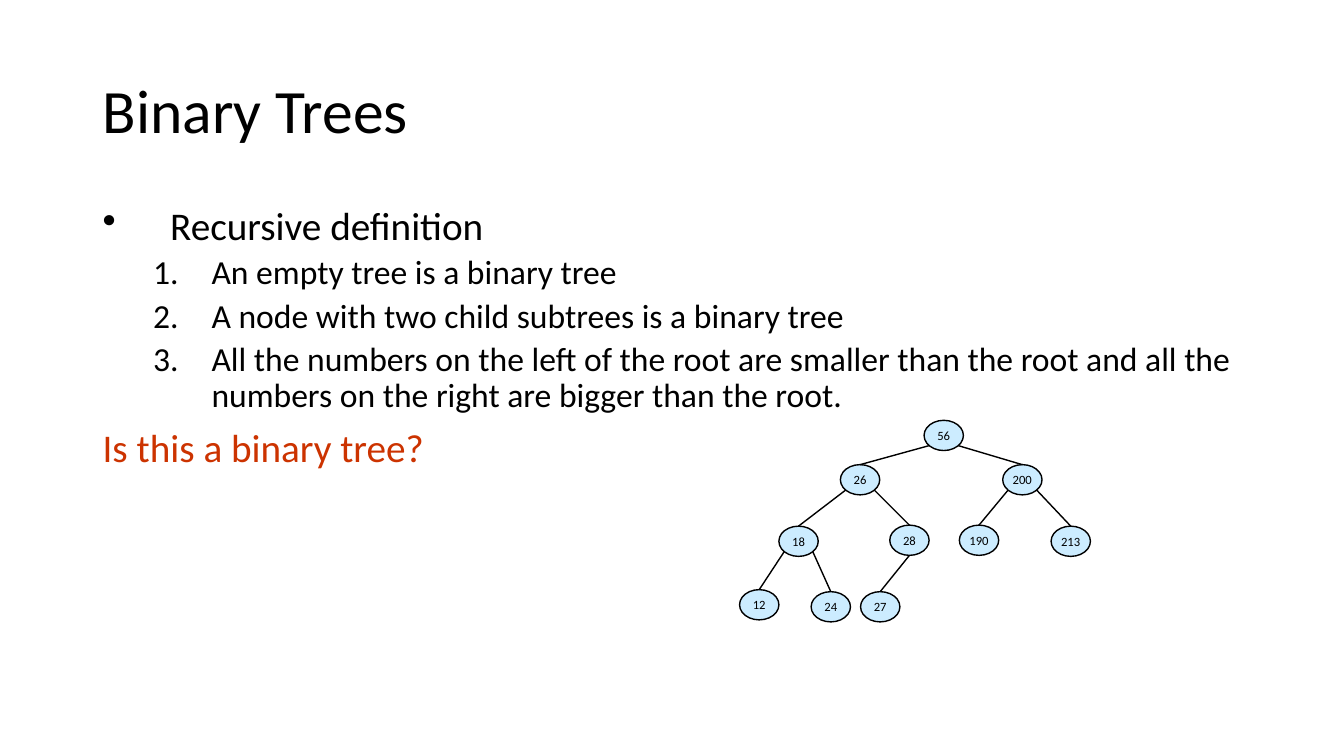
import pptx
import pptx.util
import pptx.dml.color
import pptx.enum.shapes
import pptx.enum.text
import pptx.oxml.ns
import lxml.etree

Inches = pptx.util.Inches
Pt = pptx.util.Pt
FONT = "Calibri"
COLORS = {"ink": "000000", "question": "CC3300", "node": "CCECFF"}


def color(name):
    return pptx.dml.color.RGBColor.from_string(COLORS[name])


def write(para, text, size, ink="ink", **layout):
    for name, value in layout.items():
        setattr(para, name, value)
    span = para.add_run()
    span.text = text
    for name, value in {"name": FONT, "size": Pt(size)}.items():
        setattr(span.font, name, value)
    span.font.color.rgb = color(ink)


deck = pptx.Presentation()
deck.slide_width = Inches(13.33)
deck.slide_height = Inches(7.5)
page = deck.slides.add_slide(deck.slide_layouts[6])

title = page.shapes.add_textbox(Inches(0.92), Inches(0.4), Inches(11.5), Inches(1.45))
title.text_frame.word_wrap = True
title.text_frame.vertical_anchor = pptx.enum.text.MSO_ANCHOR.MIDDLE
write(title.text_frame.paragraphs[0], "Binary Trees", 44, line_spacing=0.9)

body = page.shapes.add_textbox(Inches(0.92), Inches(2), Inches(11.5), Inches(4.76))
body.text_frame.word_wrap = True

bullet = ("buChar", {"char": "•"})
number = ("buAutoNum", {"type": "arabicPeriod"})
plain = ("buNone", {})
lines = [
    ("Recursive definition", 0, bullet, "ink"),
    ("An empty tree is a binary tree", 1, number, "ink"),
    ("A node with two child subtrees is a binary tree", 1, number, "ink"),
    ("All the numbers on the left of the root are smaller than the root "
     "and all the numbers on the right are bigger than the root.", 1, number, "ink"),
    ("Is this a binary tree?", 0, plain, "question"),
]
levels = [
    {"size": 28, "before": 10, "margin": 0.67, "hang": 0.67},
    {"size": 24, "before": 5, "margin": 1.08, "hang": 0.58},
]
for index, (text, level, (tag, marks), ink) in enumerate(lines):
    para = body.text_frame.add_paragraph() if index else body.text_frame.paragraphs[0]
    style = levels[level]
    write(para, text, style["size"], ink, level=level, line_spacing=0.9,
          space_before=Pt(style["before"]))
    properties = para._p.get_or_add_pPr()
    properties.set("marL", str(Inches(style["margin"])))
    properties.set("indent", str(-Inches(style["hang"])))
    lxml.etree.SubElement(properties, pptx.oxml.ns.qn("a:" + tag), marks)

NODE_WIDTH, NODE_HEIGHT = 0.39, 0.3
nodes = {
    56: (9.36, 4.17),
    26: (8.53, 4.61), 200: (10.14, 4.61),
    18: (7.92, 5.22), 28: (9.02, 5.21), 190: (9.71, 5.21), 213: (10.62, 5.22),
    12: (7.53, 5.85), 24: (8.24, 5.87), 27: (8.73, 5.87),
}
children = {56: (26, 200), 26: (18, 28), 200: (190, 213), 18: (12, 24), 28: (27,)}

for value, (center, top) in nodes.items():
    node = page.shapes.add_shape(
        pptx.enum.shapes.MSO_SHAPE.OVAL, Inches(center - NODE_WIDTH / 2), Inches(top),
        Inches(NODE_WIDTH), Inches(NODE_HEIGHT))
    node.shadow.inherit = False
    node.fill.solid()
    node.fill.fore_color.rgb = color("node")
    node.line.color.rgb = color("ink")
    node.line.width = Pt(1)
    node.text_frame.word_wrap = False
    node.text_frame.vertical_anchor = pptx.enum.text.MSO_ANCHOR.MIDDLE
    write(node.text_frame.paragraphs[0], str(value), 9,
          alignment=pptx.enum.text.PP_ALIGN.CENTER)

for parent, pair in children.items():
    center, top = nodes[parent]
    starts = [(-0.14, 0.25), (0.14, 0.25)] if len(pair) == 2 else [(0, NODE_HEIGHT)]
    for child, (across, down) in zip(pair, starts):
        end, bottom = nodes[child]
        branch = page.shapes.add_connector(
            pptx.enum.shapes.MSO_CONNECTOR.STRAIGHT, Inches(center + across),
            Inches(top + down), Inches(end), Inches(bottom))
        branch.line.color.rgb = color("ink")
        branch.line.width = Pt(1)
        lxml.etree.SubElement(branch._element.spPr, pptx.oxml.ns.qn("a:effectLst"))

deck.save("out.pptx")
